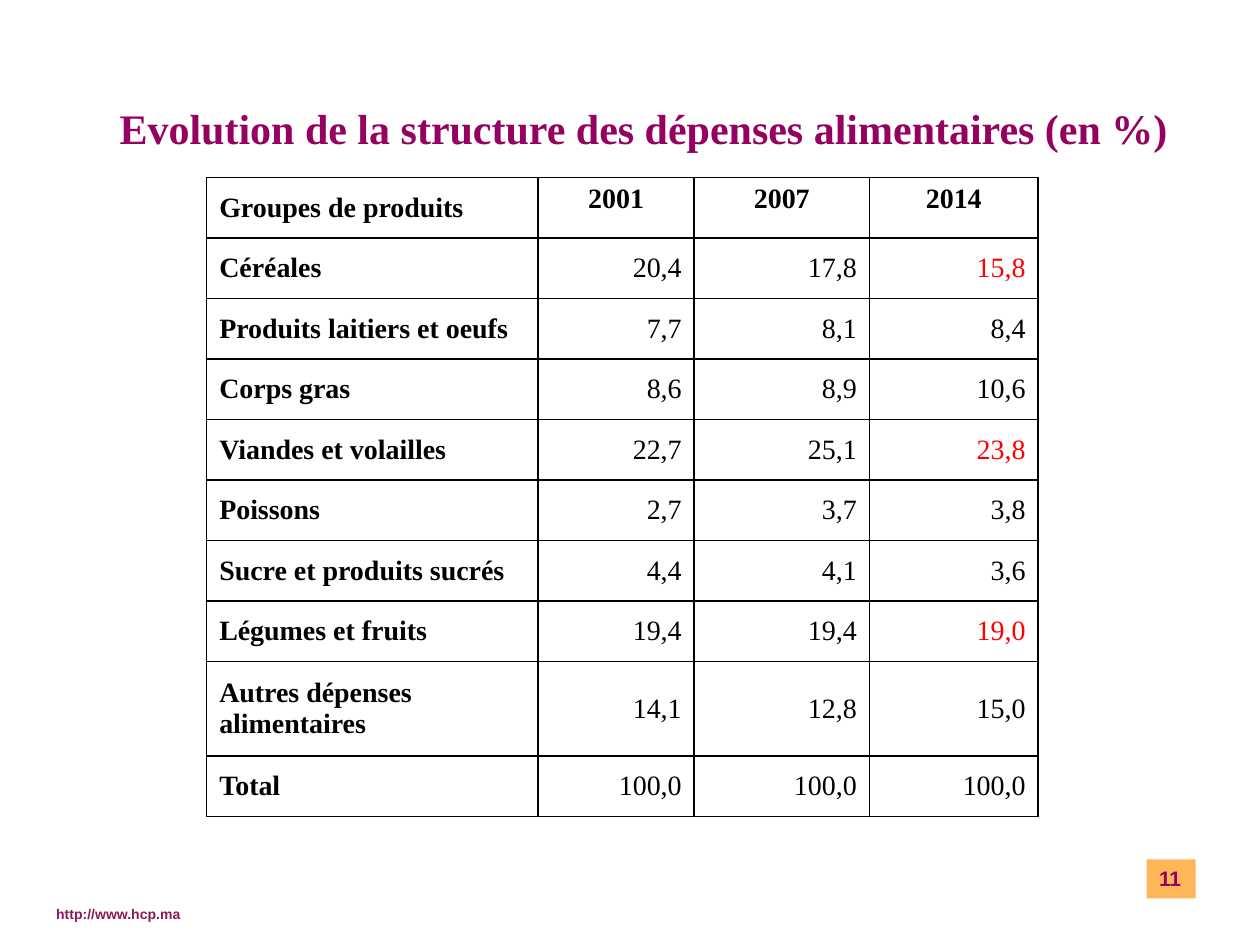
from lxml import etree
from pptx import Presentation
from pptx.dml.color import RGBColor
from pptx.enum.shapes import MSO_SHAPE
from pptx.enum.text import MSO_ANCHOR, PP_ALIGN
from pptx.oxml.ns import qn
from pptx.util import Inches, Pt

LEFT, CENTER, RIGHT = PP_ALIGN.LEFT, PP_ALIGN.CENTER, PP_ALIGN.RIGHT
TOP, MIDDLE, BOTTOM = MSO_ANCHOR.TOP, MSO_ANCHOR.MIDDLE, MSO_ANCHOR.BOTTOM
RECTANGLE = MSO_SHAPE.RECTANGLE

SERIF, SANS = "Times New Roman", "Arial"
PLUM, BURGUNDY, ORANGE = "950160", "8C185A", "FEB758"
BLACK, RED = "000000", "FF0000"

HEADER = ["Groupes de produits", "2001", "2007", "2014"]
SPENDING = [
    ["Céréales", "20,4", "17,8", "15,8"],
    ["Produits laitiers et oeufs", "7,7", "8,1", "8,4"],
    ["Corps gras", "8,6", "8,9", "10,6"],
    ["Viandes et volailles", "22,7", "25,1", "23,8"],
    ["Poissons", "2,7", "3,7", "3,8"],
    ["Sucre et produits sucrés", "4,4", "4,1", "3,6"],
    ["Légumes et fruits", "19,4", "19,4", "19,0"],
    ["Autres dépenses alimentaires", "14,1", "12,8", "15,0"],
    ["Total", "100,0", "100,0", "100,0"],
]
HIGHLIGHTED_GROUPS = {"Céréales", "Viandes et volailles", "Légumes et fruits"}
COLUMN_WIDTHS = [2.63, 1.24, 1.39, 1.34]
ROW_HEIGHT, TALL_ROW_HEIGHT = 0.48, 0.75
TALL_GROUP = "Autres dépenses alimentaires"


def color(hex_code):
    return RGBColor.from_string(hex_code)


def write(frame, text, size=16, font=SERIF, fill=BLACK, bold=True, align=LEFT):
    paragraph = frame.paragraphs[0]
    paragraph.alignment = align
    run = paragraph.add_run()
    run.text = text
    run.font.size = Pt(size)
    run.font.name = font
    run.font.bold = bold
    run.font.color.rgb = color(fill)


def add_label(slide, text, left, top, width, height, anchor, **text_format):
    label = slide.shapes.add_textbox(
        Inches(left), Inches(top), Inches(width), Inches(height))
    label.text_frame.word_wrap = True
    label.text_frame.vertical_anchor = anchor
    write(label.text_frame, text, **text_format)


def add_page_number(slide, text):
    badge = slide.shapes.add_shape(
        RECTANGLE, Inches(9.1), Inches(6.82), Inches(0.39), Inches(0.31))
    badge.shadow.inherit = False
    badge.fill.solid()
    badge.fill.fore_color.rgb = color(ORANGE)
    badge.line.fill.background()
    badge.text_frame.vertical_anchor = TOP
    write(badge.text_frame, text, size=12, font=SANS, fill=PLUM)


def set_borders(cell, hex_code, width):
    properties = cell._tc.get_or_add_tcPr()
    for position, side in enumerate(["lnL", "lnR", "lnT", "lnB"]):
        border = etree.Element(qn(f"a:{side}"), w=str(Pt(width)))
        solid = etree.SubElement(border, qn("a:solidFill"))
        etree.SubElement(solid, qn("a:srgbClr"), val=hex_code)
        properties.insert(position, border)


def cell_format(group, row, column):
    if column == 0:
        return {}
    if row == 0:
        return {"align": CENTER}
    highlighted = column == len(HEADER) - 1 and group in HIGHLIGHTED_GROUPS
    return {"align": RIGHT, "bold": False, "fill": RED if highlighted else BLACK}


def add_spending_table(slide):
    rows = [HEADER] + SPENDING
    heights = [TALL_ROW_HEIGHT if row[0] == TALL_GROUP else ROW_HEIGHT for row in rows]
    table = slide.shapes.add_table(
        len(rows), len(HEADER), Inches(1.64), Inches(1.41),
        Inches(sum(COLUMN_WIDTHS)), Inches(sum(heights))).table
    table.first_row = table.horz_banding = False
    for column, width in zip(table.columns, COLUMN_WIDTHS):
        column.width = Inches(width)
    for r, (values, height) in enumerate(zip(rows, heights)):
        table.rows[r].height = Inches(height)
        for c, value in enumerate(values):
            cell = table.cell(r, c)
            cell.fill.background()
            cell.vertical_anchor = TOP if r == 0 and c > 0 else MIDDLE
            set_borders(cell, BLACK, 1)
            write(cell.text_frame, value, **cell_format(values[0], r, c))


def main():
    presentation = Presentation()
    presentation.slide_width = Inches(10)
    presentation.slide_height = Inches(7.5)
    slide = presentation.slides.add_slide(presentation.slide_layouts[6])
    add_label(slide, "http://www.hcp.ma", 0.27, 7.14, 1.34, 0.23, BOTTOM,
              size=8, font=SANS, fill=BURGUNDY, align=CENTER)
    add_label(slide, "Evolution de la structure des dépenses alimentaires (en %)",
              0.78, 0.7, 8.66, 0.63, MIDDLE, size=24, fill=PLUM, align=CENTER)
    add_spending_table(slide)
    add_page_number(slide, "11")
    presentation.save("out.pptx")


if __name__ == "__main__":
    main()
